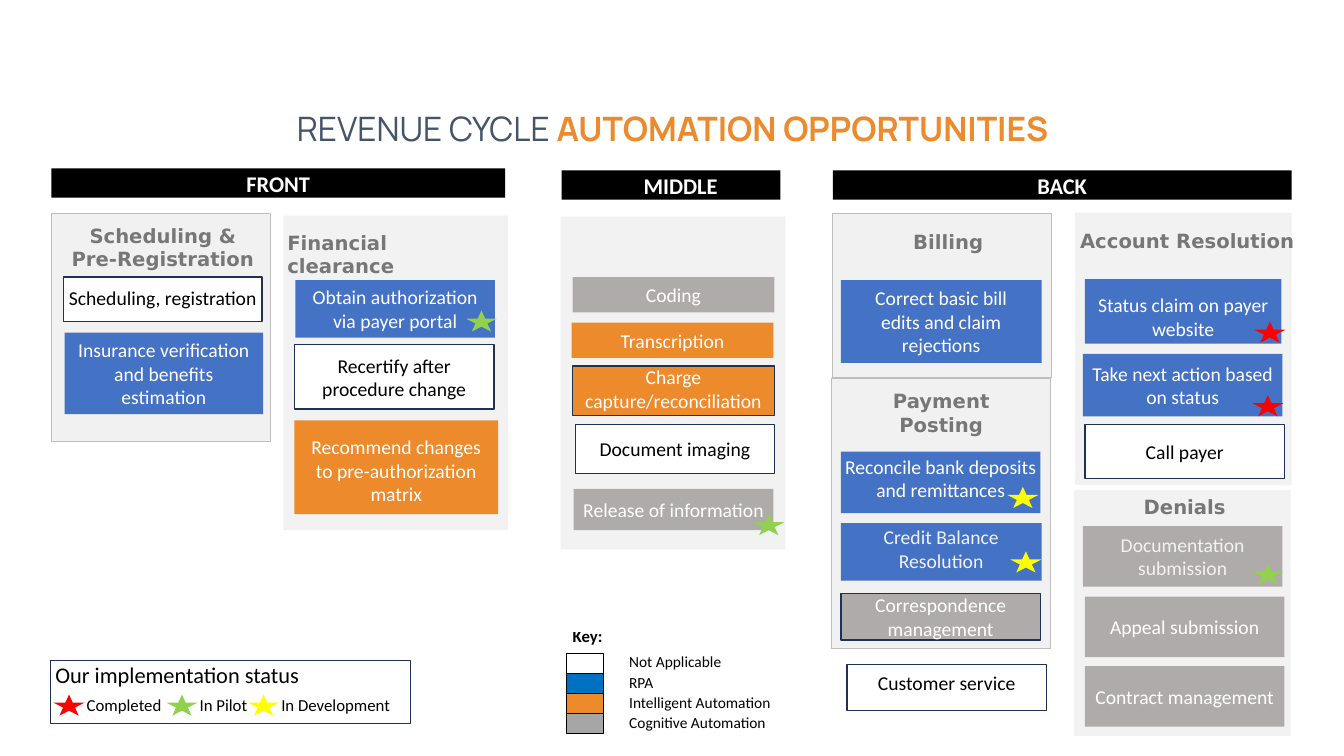
from dataclasses import dataclass
from typing import Optional

from pptx import Presentation
from pptx.dml.color import RGBColor
from pptx.enum.shapes import MSO_SHAPE as SHAPE
from pptx.enum.text import MSO_ANCHOR as ANCHOR, MSO_AUTO_SIZE, PP_ALIGN as ALIGN
from pptx.util import Inches, Pt

BLACK = RGBColor(0x00, 0x00, 0x00)
WHITE = RGBColor(0xFF, 0xFF, 0xFF)
OFF_WHITE = RGBColor(0xF2, 0xF2, 0xF2)
PANEL = RGBColor(0xF1, 0xF1, 0xF1)
PANEL_EDGE = RGBColor(0xBE, 0xBE, 0xBE)
HEADING = RGBColor(0x77, 0x77, 0x77)
SLATE = RGBColor(0x44, 0x54, 0x6A)
TITLE_ORANGE = RGBColor(0xEB, 0x8B, 0x2D)
NAVY = RGBColor(0x1E, 0x32, 0x56)
BLUE = RGBColor(0x44, 0x72, 0xC4)
ORANGE = RGBColor(0xEC, 0x8A, 0x2C)
GRAY = RGBColor(0xAF, 0xAB, 0xAB)
KEY_BLUE = RGBColor(0x00, 0x70, 0xC0)
KEY_GRAY = RGBColor(0xA6, 0xA6, 0xA6)
RED = RGBColor(0xFF, 0x00, 0x00)
GREEN = RGBColor(0x92, 0xD0, 0x50)
YELLOW = RGBColor(0xFF, 0xFF, 0x00)

STAR_W, STAR_H = 0.31, 0.21


@dataclass
class Task:
    """A task box; x and y count from its panel, star is (colour, right, bottom overhang)."""
    text: str
    fill: RGBColor
    x: float
    y: float
    w: float
    h: float
    star: Optional[tuple] = None
    inset: float = 0.1
    drop: float = 0
    ink: RGBColor = WHITE
    edge: Optional[RGBColor] = None


def add_run(p, text, size, color, bold=False, name="Calibri"):
    r = p.add_run()
    r.text = text
    r.font.size, r.font.bold, r.font.name = Pt(size), bold, name
    r.font.color.rgb = color


def set_margins(tf, left=0, top=0, right=0, bottom=0):
    tf.margin_left, tf.margin_top = Inches(left), Inches(top)
    tf.margin_right, tf.margin_bottom = Inches(right), Inches(bottom)


def add_box(slide, x, y, w, h, fill=None, edge=None, weight=1, kind=SHAPE.RECTANGLE):
    sp = slide.shapes.add_shape(kind, Inches(x), Inches(y), Inches(w), Inches(h))
    sp.shadow.inherit = False
    if fill is None:
        sp.fill.background()
    else:
        sp.fill.solid()
        sp.fill.fore_color.rgb = fill
    if edge is None:
        sp.line.fill.background()
    else:
        sp.line.color.rgb = edge
        sp.line.width = Pt(weight)
    tf = sp.text_frame
    tf.word_wrap = True
    set_margins(tf)
    return sp


def add_star(slide, x, y, color):
    add_box(slide, x, y, STAR_W, STAR_H, color, kind=SHAPE.STAR_5_POINT)


def add_title(slide, x, y, w, h):
    title = slide.shapes.title
    title.left, title.top, title.width, title.height = map(Inches, (x, y, w, h))
    tf = title.text_frame
    tf.auto_size, tf.vertical_anchor = MSO_AUTO_SIZE.NONE, ANCHOR.MIDDLE
    p = tf.paragraphs[0]
    p.alignment = ALIGN.CENTER
    add_run(p, "REVENUE CYCLE ", 24, SLATE, name="Manrope")
    add_run(p, "AUTOMATION OPPORTUNITIES", 24, TITLE_ORANGE, True, "Manrope")


def add_stage(slide, x, y, w, text, indent=0):
    tf = add_box(slide, x, y, w, 0.29, BLACK).text_frame
    set_margins(tf, left=indent, top=0.02)
    tf.paragraphs[0].alignment = ALIGN.CENTER
    add_run(tf.paragraphs[0], text, 16, WHITE, True)


def add_task(slide, x, y, task):
    x, y = x + task.x, y + task.y
    tf = add_box(slide, x, y, task.w, task.h, task.fill, task.edge).text_frame
    set_margins(tf, task.inset, max(2 * task.drop, 0), task.inset, max(-2 * task.drop, 0))
    tf.paragraphs[0].alignment = ALIGN.CENTER
    add_run(tf.paragraphs[0], task.text, 14, task.ink)
    if task.star:
        color, right, bottom = task.star
        add_star(slide, x + task.w + right - STAR_W, y + task.h + bottom - STAR_H, color)


def add_panel(slide, x, y, w, h, heading, tasks, top=0.1, left=0, right=0,
              edge=PANEL_EDGE, align=ALIGN.CENTER):
    """Draw a panel with its heading at the top and its tasks below."""
    fill = PANEL if edge else OFF_WHITE
    tf = add_box(slide, x, y, w, h, fill, edge, 0.72).text_frame
    if heading:
        tf.vertical_anchor = ANCHOR.TOP
        set_margins(tf, left, top, right)
        tf.paragraphs[0].alignment = align
        add_run(tf.paragraphs[0], heading, 14, HEADING, True, "DejaVu Sans")
    for task in tasks:
        add_task(slide, x, y, task)


def open_task(text, x, y, w, h, **options):
    return Task(text, WHITE, x, y, w, h, ink=BLACK, edge=NAVY, **options)


def add_front(slide, x, y):
    add_stage(slide, x, y, 4.5, "FRONT")
    add_panel(slide, x, y + 0.45, 2.17, 2.26, "Scheduling & Pre-Registration", [
        open_task("Scheduling, registration", 0.12, 0.63, 1.97, 0.44, inset=0.02, drop=-0.02),
        Task("Insurance verification and benefits estimation", BLUE, 0.13, 1.18, 1.97, 0.81),
    ], left=0.14, right=0.1)
    add_panel(slide, x + 2.3, y + 0.47, 2.23, 3.12, "Financial clearance", [
        Task("Obtain authorization via payer portal", BLUE, 0.12, 0.64, 1.98, 0.57,
             (GREEN, 0.02, -0.06)),
        open_task("Recertify after procedure change", 0.11, 1.28, 1.98, 0.64),
        Task("Recommend changes to pre-authorization matrix", ORANGE, 0.11, 2.03, 2.02, 0.93,
             drop=0.03),
    ], top=0.15, left=0.04, right=0.3, edge=None, align=ALIGN.LEFT)


def add_middle(slide, x, y):
    add_stage(slide, x, y, 2.17, "MIDDLE", 0.19)
    add_panel(slide, x - 0.01, y + 0.46, 2.23, 3.3, "", [
        Task("Coding", GRAY, 0.12, 0.6, 2, 0.35),
        Task("Transcription", ORANGE, 0.11, 1.05, 2, 0.35),
        Task("Charge capture/reconciliation", ORANGE, 0.12, 1.48, 2, 0.49, drop=-0.02, edge=NAVY),
        open_task("Document imaging", 0.15, 2.06, 1.97, 0.49),
        Task("Release of information", GRAY, 0.13, 2.7, 1.98, 0.41, (GREEN, 0.11, 0.05), 0.02),
    ], edge=None)


def add_back(slide, x, y):
    add_stage(slide, x, y, 4.55, "BACK")
    add_panel(slide, x, y + 0.43, 2.17, 1.63, "Billing", [
        Task("Correct basic bill edits and claim rejections", BLUE, 0.08, 0.66, 1.99, 0.82,
             inset=0.15),
    ], top=0.16, left=0.12)
    add_panel(slide, x - 0.01, y + 2.07, 2.17, 2.67, "Payment Posting", [
        Task("Reconcile bank deposits and remittances", BLUE, 0.09, 0.72, 1.98, 0.61,
             (YELLOW, -0.02, -0.05), 0.02, -0.04),
        Task("Credit Balance Resolution", BLUE, 0.09, 1.43, 1.99, 0.57,
             (YELLOW, 0, -0.08), drop=-0.03, ink=OFF_WHITE),
        Task("Correspondence management", GRAY, 0.09, 2.13, 1.98, 0.46, edge=NAVY),
    ], left=0.5, right=0.5)
    add_task(slide, x, y, open_task("Customer service", 0.14, 4.9, 1.98, 0.46, drop=-0.05))
    add_panel(slide, x + 2.4, y + 0.42, 2.15, 2.7, "Account Resolution", [
        Task("Status claim on payer website", BLUE, 0.1, 0.66, 1.95, 0.64,
             (RED, 0.04, -0.01), 0.05, 0.05),
        Task("Take next action based on status", BLUE, 0.08, 1.4, 1.98, 0.62, (RED, 0.01, 0), 0.05),
        open_task("Call payer", 0.1, 2.1, 1.98, 0.54),
    ], top=0.16, left=0.04, right=-0.04, edge=None)
    add_panel(slide, x + 2.39, y + 3.17, 2.15, 2.44, "Denials", [
        Task("Documentation submission", GRAY, 0.09, 0.36, 1.98, 0.6,
             (GREEN, 0.01, -0.02), ink=OFF_WHITE),
        Task("Appeal submission", GRAY, 0.11, 1.06, 1.98, 0.6),
        Task("Contract management", GRAY, 0.11, 1.75, 1.98, 0.6, inset=0.02),
    ], top=0.05, left=0.05, edge=None)


def add_status_legend(slide, x, y, w, h):
    tf = add_box(slide, x, y, w, h, edge=NAVY).text_frame
    tf.vertical_anchor = ANCHOR.TOP
    set_margins(tf, left=0.05, top=0.01)
    tf.paragraphs[0].alignment = ALIGN.LEFT
    add_run(tf.paragraphs[0], "Our implementation status", 16, BLACK)
    for dx, color, text in ((0.03, RED, "Completed"), (1.15, GREEN, "In Pilot"),
                            (1.96, YELLOW, "In Development")):
        add_star(slide, x + dx, y + 0.34, color)
        label = slide.shapes.add_textbox(Inches(x + dx + 0.33), Inches(y + 0.34),
                                         Inches(1.2), Inches(STAR_H))
        set_margins(label.text_frame)
        label.text_frame.vertical_anchor = ANCHOR.MIDDLE
        add_run(label.text_frame.paragraphs[0], text, 12, BLACK)


def add_key(slide, x, y):
    entries = [("Not Applicable", WHITE), ("RPA", KEY_BLUE),
               ("Intelligent Automation", ORANGE), ("Cognitive Automation", KEY_GRAY)]
    table = slide.shapes.add_table(len(entries) + 1, 1, Inches(x + 0.06), Inches(y),
                                   Inches(1.97), Inches(1.02)).table
    table.first_row = table.horz_banding = False
    for i, text in enumerate(["Key:"] + [name for name, _ in entries]):
        table.rows[i].height = Inches(0.2 if i else 0.22)
        cell = table.cell(i, 0)
        cell.fill.background()
        set_margins(cell, left=0.56 if i else 0)
        p = cell.text_frame.paragraphs[0]
        if i == 0:
            p.line_spacing = Pt(11.4)
        add_run(p, text, 11 if i else 12, BLACK, i == 0)
    for i, (_, color) in enumerate(entries):
        add_box(slide, x, y + 0.22 + 0.2 * i, 0.37, 0.2, color, BLACK, 0.75)


def main():
    prs = Presentation()
    prs.slide_width, prs.slide_height = Inches(13.33), Inches(7.5)
    slide = prs.slides.add_slide(prs.slide_layouts[5])
    add_title(slide, 1.02, 1.02, 11.3, 0.5)
    add_front(slide, 0.51, 1.67)
    add_middle(slide, 5.57, 1.69)
    add_back(slide, 8.26, 1.69)
    add_status_legend(slide, 0.5, 6.55, 3.57, 0.63)
    add_key(slide, 5.62, 6.26)
    prs.save("out.pptx")


if __name__ == "__main__":
    main()
